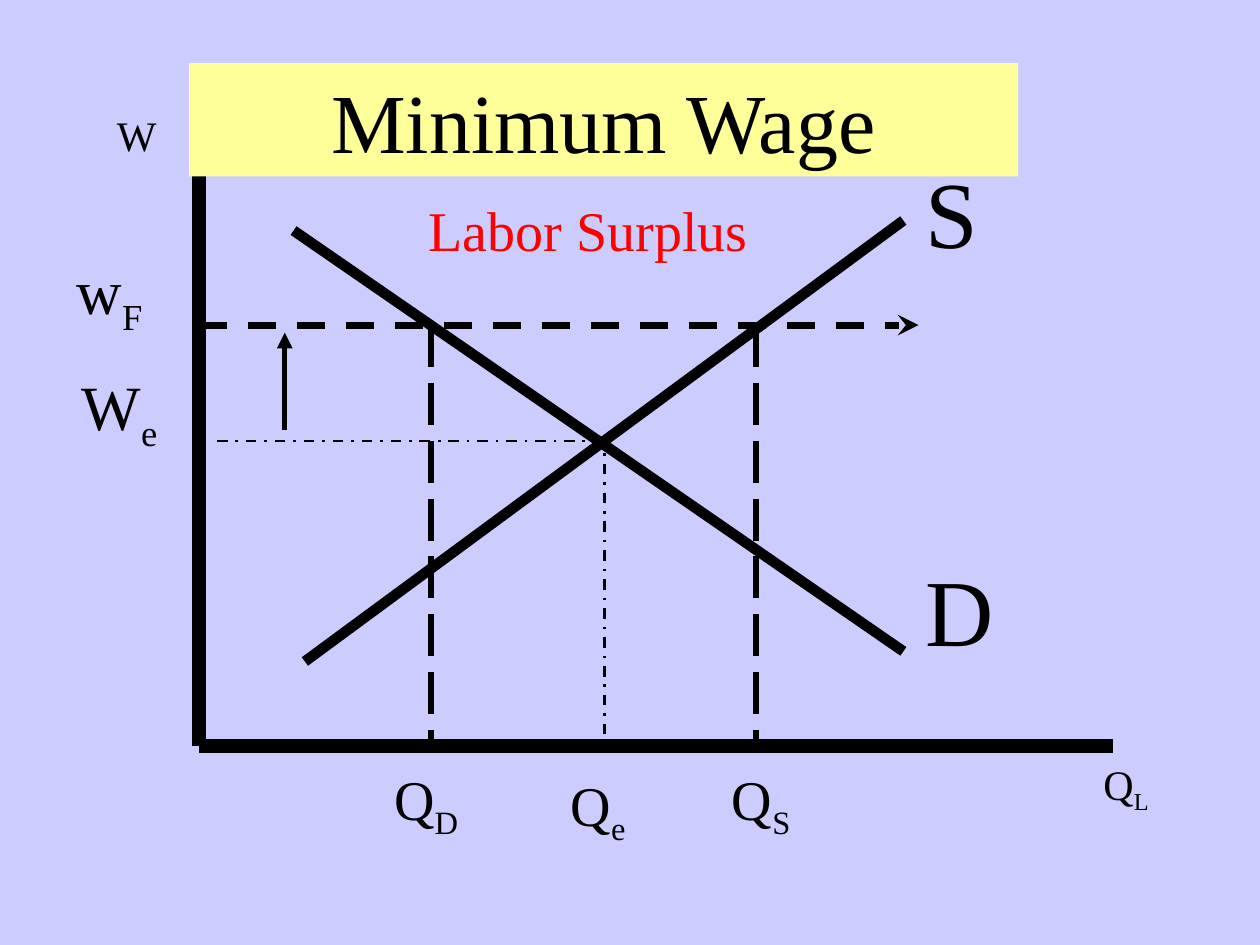
from dataclasses import dataclass

from lxml import etree
from pptx import Presentation
from pptx.dml.color import RGBColor
from pptx.enum.dml import MSO_LINE
from pptx.enum.shapes import MSO_CONNECTOR
from pptx.enum.text import MSO_ANCHOR, MSO_AUTO_SIZE, PP_ALIGN
from pptx.oxml.ns import qn
from pptx.util import Inches, Pt

STRAIGHT = MSO_CONNECTOR.STRAIGHT
DASH, LONG_DASH, DASH_DOT = MSO_LINE.DASH, MSO_LINE.LONG_DASH, MSO_LINE.DASH_DOT
CENTER, LEFT = PP_ALIGN.CENTER, PP_ALIGN.LEFT
FONT = "Times New Roman"
BLACK, RED, YELLOW, LAVENDER = "000000", "FF0000", "FFFF99", "CCCCFF"

# Shared chart coordinates in inches
AXIS_X, AXIS_Y = 1.58, 5.92
FLOOR_Y, EQUIL_Y = 2.58, 3.5
DEMAND_X, EQUIL_X, SUPPLY_X = 3.42, 4.8, 6


@dataclass
class Line:
    x1: float
    y1: float
    x2: float
    y2: float
    width: float
    dash: MSO_LINE | None = None
    head: str = ""
    tail: str = ""


@dataclass
class Label:
    text: str
    sub: str
    x: float
    y: float
    w: float
    h: float
    size: float
    wrap: bool = True
    color: str = BLACK
    align: PP_ALIGN = LEFT


LINES = [
    # Demand and supply curves
    Line(2.33, 1.83, 7.17, 5.17, 6),
    Line(7.17, 1.75, 2.42, 5.25, 6),
    # Axes
    Line(AXIS_X, 1.08, AXIS_X, AXIS_Y, 8),
    Line(AXIS_X, AXIS_Y, 8.83, AXIS_Y, 8),
    # Wage floor and the quantities it leads to
    Line(AXIS_X, FLOOR_Y, 7.29, FLOOR_Y, 4, DASH, tail="stealth"),
    Line(DEMAND_X, FLOOR_Y, DEMAND_X, 5.93, 3, LONG_DASH),
    Line(SUPPLY_X, FLOOR_Y, SUPPLY_X, 5.96, 3, LONG_DASH),
    # Equilibrium guides
    Line(4.79, EQUIL_Y, 1.71, EQUIL_Y, 1.5, DASH_DOT),
    Line(EQUIL_X, 3.45, EQUIL_X, 5.95, 1.5, DASH_DOT),
    # Wage increase
    Line(2.26, 2.64, 2.26, 3.41, 3, head="triangle"),
]

LABELS = [
    # Curves
    Label("D", "", 7.25, 4.33, 0.92, 1, 54),
    Label("S", "", 7.25, 1.17, 0.75, 1, 54),
    Label("Labor Surplus", "", 3.17, 1.5, 3, 0.63, 32, color=RED, align=CENTER),
    # Wages
    Label("w", "F", 0.51, 1.95, 1, 0.7, 36),
    Label("W", "e", 0.55, 2.87, 1.07, 0.7, 36),
    # Quantities
    Label("Q", "D", 3.03, 6.02, 0.8, 0.63, 32, wrap=False),
    Label("Q", "e", 4.43, 6.07, 0.76, 0.63, 32, wrap=False),
    Label("Q", "S", 5.71, 6.02, 0.71, 0.63, 32, wrap=False),
    # Axis names
    Label("W", "", 0.83, 0.82, 0.45, 0.5, 24, wrap=False),
    Label("Q", "L", 8.66, 5.97, 0.67, 0.5, 24, wrap=False),
]


def rgb(color: str) -> RGBColor:
    return RGBColor.from_string(color)


def draw_line(s, line: Line) -> None:
    cx = s.shapes.add_connector(STRAIGHT, Inches(line.x1), Inches(line.y1),
                                Inches(line.x2), Inches(line.y2))
    cx.line.color.rgb = rgb(BLACK)
    cx.line.width = Pt(line.width)
    if line.dash is not None:
        cx.line.dash_style = line.dash
    ln = cx.line._get_or_add_ln()
    for tag, kind in (("a:headEnd", line.head), ("a:tailEnd", line.tail)):
        if kind:
            etree.SubElement(ln, qn(tag)).set("type", kind)
    etree.SubElement(cx.element.spPr, qn("a:effectLst"))


def write_text(tf, text: str, sub: str, size: float, color: str,
               align: PP_ALIGN, wrap: bool) -> None:
    tf.text = text
    tf.word_wrap = wrap
    tf.auto_size = MSO_AUTO_SIZE.SHAPE_TO_FIT_TEXT
    tf.vertical_anchor = MSO_ANCHOR.TOP
    p = tf.paragraphs[0]
    p.alignment = align
    # Half a line of space before the paragraph
    before = etree.SubElement(p._p.get_or_add_pPr(), qn("a:spcBef"))
    etree.SubElement(before, qn("a:spcPct")).set("val", "50000")
    if sub:
        r = p.add_run()
        r.text = sub
        r._r.get_or_add_rPr().set("baseline", "-25000")
    for r in p.runs:
        r.font.name = FONT
        r.font.size = Pt(size)
        r.font.color.rgb = rgb(color)


def place(sp, x: float, y: float, w: float, h: float) -> None:
    sp.left, sp.top, sp.width, sp.height = map(Inches, (x, y, w, h))


def draw_label(s, label: Label) -> None:
    sp = s.shapes.add_textbox(0, 0, 0, 0)
    place(sp, label.x, label.y, label.w, label.h)
    write_text(sp.text_frame, label.text, label.sub, label.size, label.color,
               label.align, label.wrap)


def draw_title(s) -> None:
    title = s.shapes.title
    place(title, 1.5, 0.5, 6.58, 0.9)
    title.fill.solid()
    title.fill.fore_color.rgb = rgb(YELLOW)
    write_text(title.text_frame, "Minimum Wage", "", 48, BLACK, CENTER, True)
    # Bring the title in front of the wage axis
    title.element.getparent().append(title.element)


def main() -> None:
    prs = Presentation()
    prs.slide_width, prs.slide_height = Inches(10), Inches(7.5)
    s = prs.slides.add_slide(prs.slide_layouts[5])
    s.background.fill.solid()
    s.background.fill.fore_color.rgb = rgb(LAVENDER)
    for line in LINES:
        draw_line(s, line)
    for label in LABELS:
        draw_label(s, label)
    draw_title(s)
    prs.save("out.pptx")


if __name__ == "__main__":
    main()
